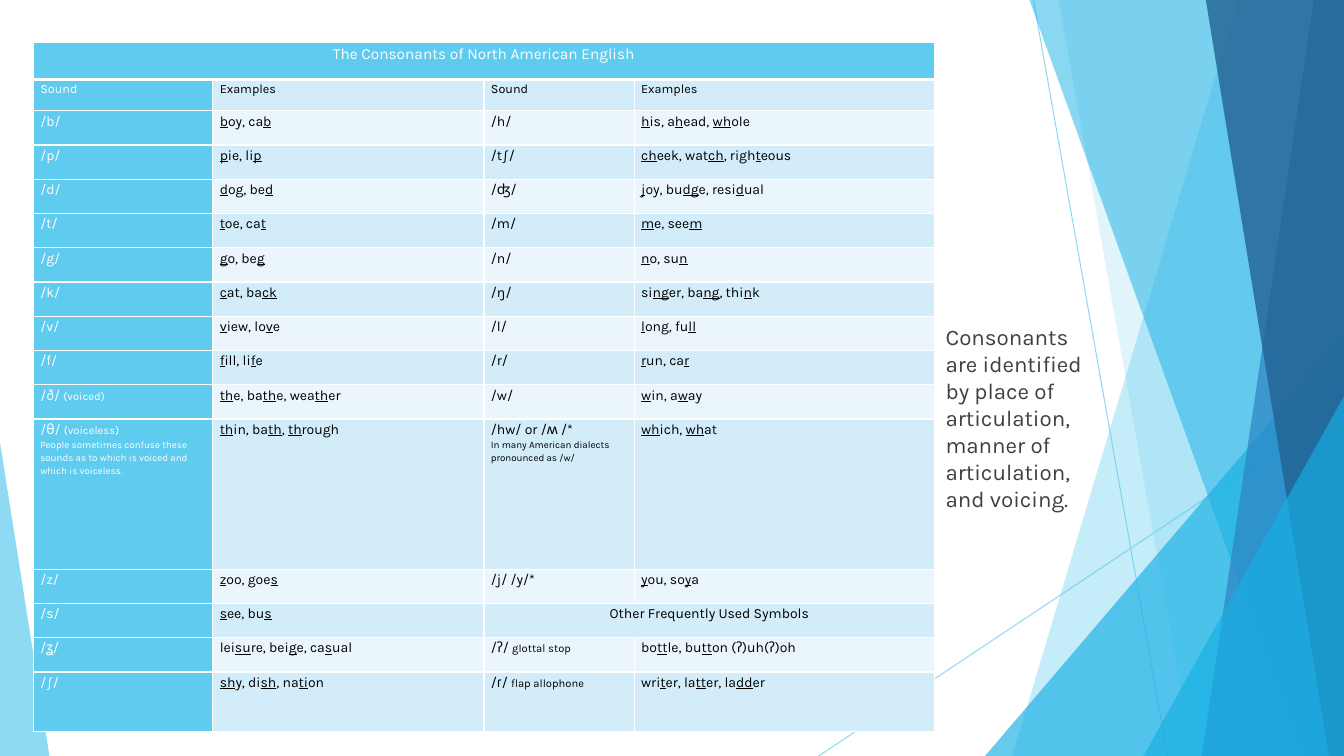
import pptx
import pptx.util
import pptx.dml.color
import pptx.enum.shapes
import pptx.enum.text
import pptx.oxml
import pptx.oxml.ns
from pptx.util import Inches

COLORS = {
    "sky": "5FCBEF", "cyan": "17B0E4", "blue": "2E83C3", "navy": "226292",
    "pale": "EAF6FC", "light": "D2ECF9", "white": "FFFFFF",
    "black": "000000", "gray": "404040",
}
FONT = "Karla"
NAMESPACE = pptx.oxml.ns.nsdecls("a")

COLUMN_WIDTHS = [1.78, 2.69, 1.49, 2.98]
ROW_HEIGHTS = [0.37, 0.31] + [0.34] * 9 + [1.49] + [0.34] * 3 + [0.59]
MERGES = {0: (0, 3), 13: (2, 3)}

# Underscores switch underlining, a bar starts smaller text.
CONSONANTS = [
    ["The Consonants of North American English", "", "", ""],
    ["Sound", "Examples", "Sound", "Examples"],
    ["/b/", "_b_oy, ca_b_", "/h/", "_h_is, a_h_ead, _wh_ole"],
    ["/p/", "_p_ie, li_p_", "/t∫/", "_ch_eek, wat_ch_, righ_t_eous"],
    ["/d/", "_d_og, be_d_", "/ʤ/", "_j_oy, bu_dg_e, resi_d_ual"],
    ["/t/", "_t_oe, ca_t_", "/m/", "_m_e, see_m_"],
    ["/g/", "_g_o, be_g_", "/n/", "_n_o, su_n_"],
    ["/k/", "_c_at, ba_ck_", "/ŋ/", "si_ng_er, ba_ng_, thi_n_k"],
    ["/v/", "_v_iew, lo_v_e", "/l/", "_l_ong, fu_ll_"],
    ["/f/", "_f_ill, li_f_e", "/r/", "_r_un, ca_r_"],
    ["/ð/ |(voiced)", "_th_e, ba_th_e, wea_th_er", "/w/", "_w_in, a_w_ay"],
    ["/θ/ |(voiceless)\nPeople sometimes confuse these sounds as to which is "
     "voiced and which is voiceless.",
     "_th_in, ba_th_, _th_rough",
     "/hw/ or /ʍ /*\nIn many American dialects pronounced as /w/",
     "_wh_ich, _wh_at"],
    ["/z/", "_z_oo, goe_s_", "/j/ /y/*", "_y_ou, so_y_a"],
    ["/s/", "_s_ee, bu_s_", "Other Frequently Used Symbols", ""],
    ["/ʓ/", "lei_su_re, bei_g_e, ca_s_ual", "/ʔ/ |glottal stop",
     "bo_tt_le, bu_tt_on (ʔ)uh(ʔ)oh"],
    ["/∫/", "_sh_y, di_sh_, na_ti_on", "/ɾ/ |flap allophone",
     "wri_t_er, la_tt_er, la_dd_er"],
]


class SlideBuilder:
    def __init__(self, presentation):
        self.slide = presentation.slides.add_slide(presentation.slide_layouts[6])

    def color(self, name):
        return pptx.dml.color.RGBColor.from_string(COLORS[name])

    def fade(self, element, percent):
        for color in element.iter(pptx.oxml.ns.qn("a:srgbClr")):
            color.append(pptx.oxml.parse_xml(
                f'<a:alpha {NAMESPACE} val="{percent * 1000}"/>'))

    def paint(self, shape, color, percent):
        shape.shadow.inherit = False
        shape.fill.solid()
        shape.fill.fore_color.rgb = self.color(color)
        shape.line.fill.background()
        self.fade(shape.fill._xPr, percent)

    def line(self, start, end):
        connector = self.slide.shapes.add_connector(
            pptx.enum.shapes.MSO_CONNECTOR.STRAIGHT,
            *[Inches(value) for value in (*start, *end)])
        connector.line.color.rgb = self.color("sky")
        connector.line.width = pptx.util.Pt(0.75)
        properties = connector._element.spPr
        self.fade(properties, 70)
        properties.append(pptx.oxml.parse_xml(f"<a:effectLst {NAMESPACE}/>"))

    def band(self, top_left, bottom_left, color, percent):
        builder = self.slide.shapes.build_freeform(
            Inches(top_left), 0, scale=1.0)
        builder.add_line_segments([
            (Inches(13.33), 0), (Inches(13.33), Inches(7.5)),
            (Inches(bottom_left), Inches(7.5))], close=True)
        self.paint(builder.convert_to_shape(), color, percent)

    def triangle(self, left, top, width, apex, color, percent):
        shape = self.slide.shapes.add_shape(
            pptx.enum.shapes.MSO_SHAPE.ISOSCELES_TRIANGLE, Inches(left),
            Inches(top), Inches(width), Inches(7.5 - top))
        shape.adjustments[0] = apex
        self.paint(shape, color, percent)

    def run(self, paragraph, text, size, color, underline=False):
        run = paragraph.add_run()
        run.text = text
        run.font.name = FONT
        run.font.size = pptx.util.Pt(size)
        run.font.color.rgb = self.color(color)
        if underline:
            run.font.underline = True

    def marked_text(self, text_frame, text, size, color, centered):
        for index, line in enumerate(text.split("\n")):
            paragraph = text_frame.add_paragraph() if index else text_frame.paragraphs[0]
            paragraph.line_spacing = 1.15
            if centered:
                paragraph.alignment = pptx.enum.text.PP_ALIGN.CENTER
            main, _, small = line.partition("|")
            for position, part in enumerate(main.split("_")):
                if part:
                    self.run(paragraph, part, 7 if index else size, color,
                             position % 2 == 1)
            if small:
                self.run(paragraph, small, 8, color)

    def cell_style(self, cell, fill, bottom_width):
        cell.margin_left = cell.margin_right = Inches(0.07)
        cell.margin_top = cell.margin_bottom = 0
        properties = cell._tc.get_or_add_tcPr()
        for side, width in zip("LRTB", (1, 1, 1, bottom_width)):
            properties.append(pptx.oxml.parse_xml(
                f'<a:ln{side} {NAMESPACE} w="{pptx.util.Pt(width)}"><a:solidFill>'
                f'<a:srgbClr val="{COLORS["white"]}"/></a:solidFill></a:ln{side}>'))
        cell.fill.solid()
        cell.fill.fore_color.rgb = self.color(fill)

    def table(self, left, top, rows):
        table = self.slide.shapes.add_table(
            len(rows), len(COLUMN_WIDTHS), Inches(left), Inches(top),
            Inches(sum(COLUMN_WIDTHS)), Inches(sum(ROW_HEIGHTS))).table
        table.first_row = table.horz_banding = False
        for column, width in zip(table.columns, COLUMN_WIDTHS):
            column.width = Inches(width)
        for row, height in zip(table.rows, ROW_HEIGHTS):
            row.height = Inches(height)
        for row, (first, last) in MERGES.items():
            table.cell(row, first).merge(table.cell(row, last))
        for row, texts in enumerate(rows):
            for column, text in enumerate(texts):
                cell = table.cell(row, column)
                heading = row == 0 or column == 0
                fill = "sky" if heading else ("light" if row % 2 else "pale")
                self.cell_style(cell, fill, 1 if row else 3)
                self.marked_text(cell.text_frame, text, {0: 11, 1: 9}.get(row, 10),
                                 "white" if heading else "black",
                                 cell.is_merge_origin)

    def text(self, left, top, width, height, text):
        shape = self.slide.shapes.add_textbox(
            Inches(left), Inches(top), Inches(width), Inches(height))
        shape.text_frame.word_wrap = True
        paragraph = shape.text_frame.paragraphs[0]
        paragraph.space_before = pptx.util.Pt(10)
        self.run(paragraph, text, 16, "gray")


def main():
    presentation = pptx.Presentation()
    presentation.slide_width = Inches(13.33)
    presentation.slide_height = Inches(7.5)
    builder = SlideBuilder(presentation)
    builder.line((10.25, 0), (11.58, 7.5))
    builder.line((13.33, 4.03), (8.12, 7.5))
    builder.band(12.28, 10.04, "sky", 36)
    builder.band(10.5, 11.83, "sky", 20)
    builder.triangle(9.77, 3.33, 3.56, 1, "cyan", 66)
    builder.band(10.21, 12.91, "cyan", 50)
    builder.band(13.03, 11.92, "blue", 70)
    builder.band(11.96, 13.18, "navy", 80)
    builder.triangle(11.34, 3.93, 1.99, 1, "cyan", 66)
    builder.triangle(0, 4.39, 0.49, 0, "sky", 70)
    builder.table(0.33, 0.42, CONSONANTS)
    builder.text(9.28, 3.16, 1.65, 2.29,
                 "Consonants are identified by place of articulation, "
                 "manner of articulation, and voicing.")
    presentation.save("out.pptx")


if __name__ == "__main__":
    main()
